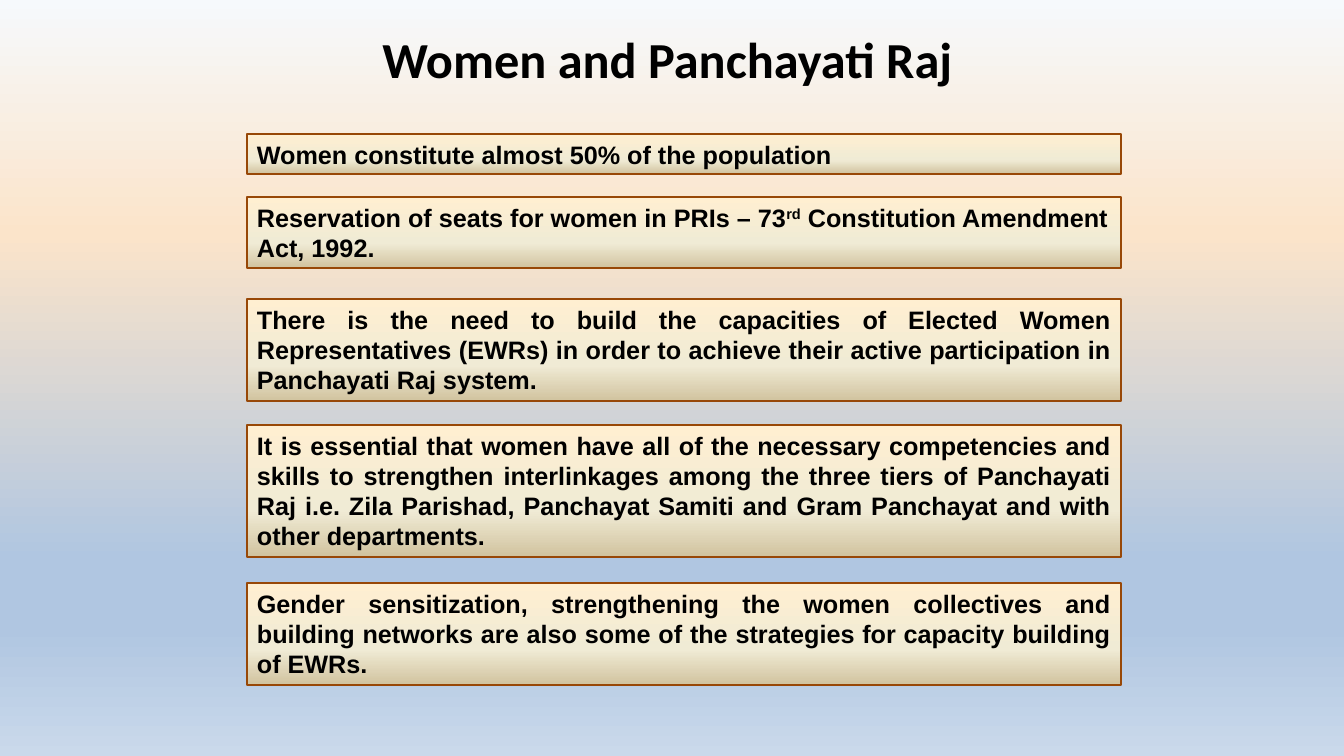
from lxml import etree
from pptx import Presentation
from pptx import util as u
from pptx.dml.color import RGBColor
from pptx.enum import shapes, text
from pptx.oxml.ns import qn

PX = 914400 / 100.8
COLORS = {"ink": "000000", "border": "984807"}
SKY = [(0, "F6F9FC"), (31, "FBE4CA"), (74, "B0C6E1"), (83, "B0C6E1"), (100, "CAD9EB")]
SAND = [(0, "FFEFD1"), (65, "F0EBD5"), (100, "D1C39F")]


def paint_gradient(fill, element, stops):
    """Fill from top to bottom with (percent, colour) stops."""
    fill.gradient()
    fill.gradient_angle = 270
    stop_list = next(element.iter(qn("a:gsLst")))
    for stop in list(stop_list):
        stop_list.remove(stop)
    for percent, color in stops:
        stop = etree.SubElement(stop_list, qn("a:gs"), pos=str(percent * 1000))
        etree.SubElement(stop, qn("a:srgbClr"), val=color)


def add_span(para, words, font, size):
    span = para.add_run()
    span.text = words
    span.font.name = font
    span.font.size = u.Pt(size)
    span.font.bold = True
    span.font.color.rgb = RGBColor.from_string(COLORS["ink"])
    return span


deck = Presentation()
deck.slide_width = u.Emu(round(1344 * PX))
deck.slide_height = u.Emu(round(756 * PX))
page = deck.slides.add_slide(deck.slide_layouts[6])

# Background
paint_gradient(page.background.fill, page.element, SKY)

# Title
title = page.shapes.add_textbox(*[u.Emu(round(n * PX)) for n in (175, 30, 985, 56)])
title.text_frame.word_wrap = True
title.text_frame.vertical_anchor = text.MSO_ANCHOR.MIDDLE
para = title.text_frame.paragraphs[0]
para.alignment = text.PP_ALIGN.CENTER
add_span(para, "Women and Panchayati Raj", "Calibri", 36)

# Statements: top, height, alignment, spans
LEFT, JUSTIFY = text.PP_ALIGN.LEFT, text.PP_ALIGN.JUSTIFY
statements = [
    (134, 40, LEFT, ["Women constitute almost 50% of the population"]),
    (197, 71, LEFT, ["Reservation of seats for women in PRIs – 73", "rd",
                     " Constitution Amendment Act, 1992."]),
    (299, 102, JUSTIFY, ["There is the need to build the capacities of Elected Women "
                         "Representatives (EWRs) in order to achieve their active "
                         "participation in Panchayati Raj system."]),
    (425, 132, JUSTIFY, ["It is essential that women have all of the necessary competencies "
                         "and skills to strengthen interlinkages among the three tiers of "
                         "Panchayati Raj i.e. Zila Parishad, Panchayat Samiti and Gram "
                         "Panchayat and with other departments."]),
    (583, 102, JUSTIFY, ["Gender sensitization, strengthening the women collectives and "
                         "building networks are also some of the strategies for capacity "
                         "building of EWRs."]),
]
for top, height, alignment, spans in statements:
    box = page.shapes.add_shape(shapes.MSO_SHAPE.RECTANGLE,
                                *[u.Emu(round(n * PX)) for n in (247, top, 874, height)])
    box.shadow.inherit = False
    paint_gradient(box.fill, box.element, SAND)
    box.line.color.rgb = RGBColor.from_string(COLORS["border"])
    box.line.width = u.Pt(1.75)
    frame = box.text_frame
    frame.word_wrap = True
    frame.auto_size = text.MSO_AUTO_SIZE.SHAPE_TO_FIT_TEXT
    frame.vertical_anchor = text.MSO_ANCHOR.TOP
    para = frame.paragraphs[0]
    para.alignment = alignment
    for words in spans:
        span = add_span(para, words, "Arial", 18)
        if words == "rd":  # raised ordinal ending
            span.font._element.set("baseline", "30000")

deck.save("out.pptx")
